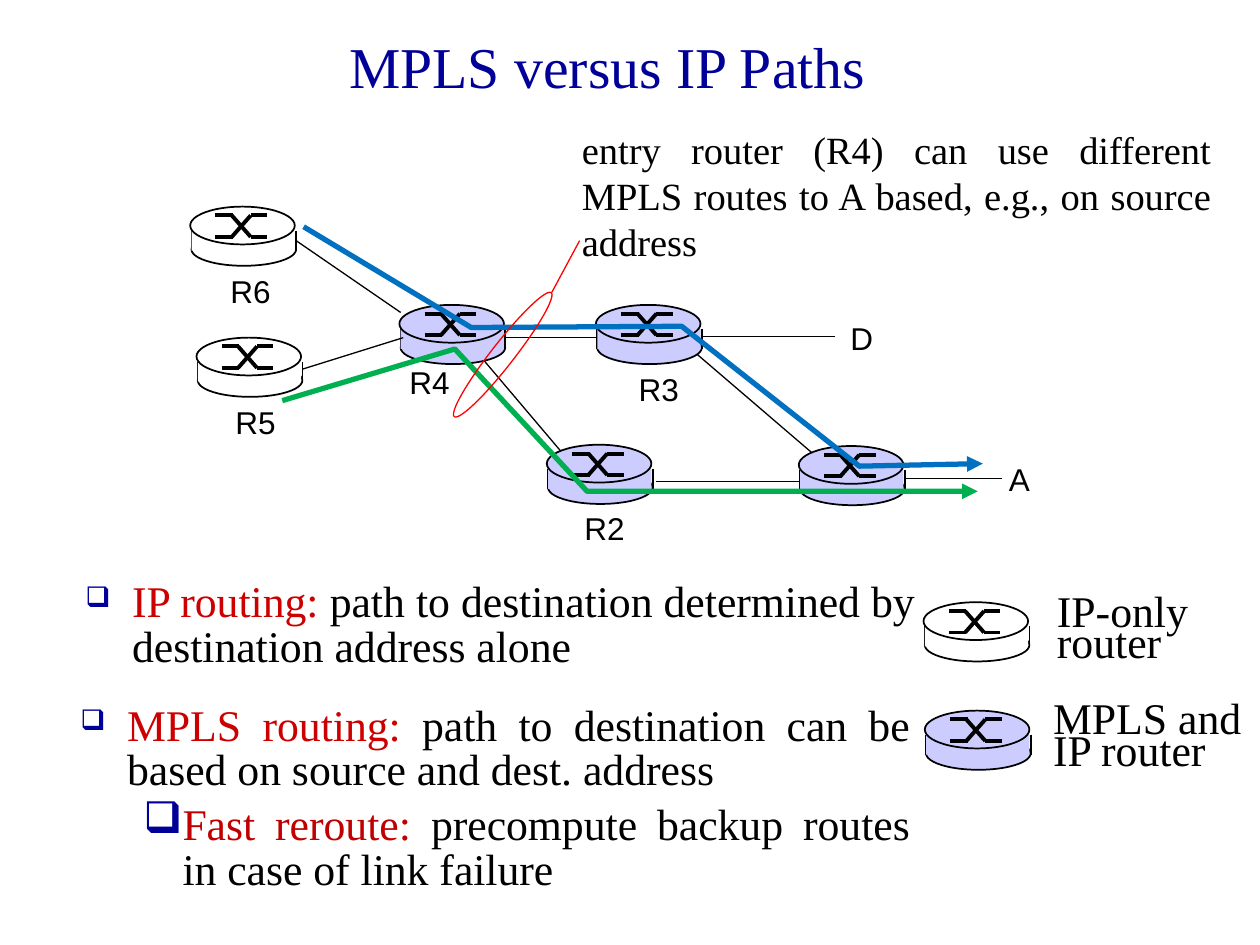
from lxml.etree import SubElement
from pptx import Presentation
from pptx.dml.color import RGBColor
from pptx.enum.shapes import MSO_CONNECTOR, MSO_SHAPE
from pptx.enum.text import MSO_ANCHOR, MSO_AUTO_SIZE, PP_ALIGN
from pptx.oxml.ns import qn
from pptx.util import Inches, Pt

SERIF = "Times New Roman"
BLACK, WHITE, LILAC = "000000", "FFFFFF", "CCCCFF"
NAVY, RED, CRIMSON = "000099", "FF0000", "CC0000"


def tint(code):
    return RGBColor.from_string(code)


def style(shape, fill=None, line=None, width=1):
    shape.shadow.inherit = False
    if fill:
        shape.fill.solid()
        shape.fill.fore_color.rgb = tint(fill)
    else:
        shape.fill.background()
    if line:
        shape.line.color.rgb = tint(line)
        shape.line.width = Pt(width)
    else:
        shape.line.fill.background()
    return shape


def add_form(shapes, kind, box, **look):
    return style(shapes.add_shape(kind, *map(Inches, box)), **look)


def add_line(shapes, ends, color=BLACK, width=0.75):
    line = shapes.add_connector(MSO_CONNECTOR.STRAIGHT, *map(Inches, ends))
    line.line.color.rgb = tint(color)
    line.line.width = Pt(width)
    SubElement(line._element.spPr, qn("a:effectLst"))


def add_bullet(para, left, hang, scale):
    props = para._p.get_or_add_pPr()
    props.set("marL", str(Inches(left)))
    props.set("indent", str(-Inches(hang)))
    color = SubElement(props, qn("a:buClr"))
    SubElement(color, qn("a:srgbClr"), val=NAVY)
    SubElement(props, qn("a:buSzPct"), val=str(scale * 1000))
    SubElement(props, qn("a:buChar"), char="❑")


def add_text(shapes, box, paras, size=25, font=SERIF, color=BLACK, align=None,
             wrap=True, grow=False, anchor=MSO_ANCHOR.TOP, space=None,
             before=(), bullets=()):
    frame = shapes.add_textbox(*map(Inches, box)).text_frame
    frame.word_wrap = wrap
    frame.auto_size = MSO_AUTO_SIZE.SHAPE_TO_FIT_TEXT if grow else MSO_AUTO_SIZE.NONE
    frame.vertical_anchor = anchor
    for i, runs in enumerate(paras):
        para = frame.paragraphs[0] if i == 0 else frame.add_paragraph()
        if align is not None:
            para.alignment = align
        if space:
            para.line_spacing = space
        if before:
            para.space_before = Pt(before[i])
        if bullets:
            para.level = i
            add_bullet(para, *bullets[i])
        for words, hue in [(runs, color)] if isinstance(runs, str) else runs:
            run = para.add_run()
            run.text = words
            run.font.size = Pt(size)
            run.font.name = font
            run.font.color.rgb = tint(hue)


def add_router(shapes, x, y, fill):
    parts = shapes.add_group_shape().shapes
    add_form(parts, MSO_SHAPE.OVAL, (x + 0.01, y + 0.21, 0.83, 0.26), fill=fill, line=BLACK)
    for side in (x + 0.01, x + 0.84):
        add_line(parts, (side, y + 0.19, side, y + 0.35), width=1)
    add_form(parts, MSO_SHAPE.RECTANGLE, (x + 0.01, y + 0.19, 0.82, 0.16), fill=fill)
    add_form(parts, MSO_SHAPE.OVAL, (x, y, 0.83, 0.3), fill=fill, line=BLACK)
    top, low = y + 0.07, y + 0.24
    for near, far in ((top, low), (low, top)):
        add_line(parts, (x + 0.2, near, x + 0.34, near), width=2.25)
        add_line(parts, (x + 0.33, near, x + 0.48, far), width=2.25)
        add_line(parts, (x + 0.48, far, x + 0.61, far), width=2.25)


def add_route(shapes, points, color):
    spots = [(Inches(x), Inches(y)) for x, y in points]
    form = shapes.build_freeform(*spots[0])
    form.add_line_segments(spots[1:], close=False)
    route = style(form.convert_to_shape(), line=color, width=3)
    SubElement(route._element.spPr.find(qn("a:ln")), qn("a:tailEnd"), type="triangle")


def add_network(shapes, x, y):
    for dx, dy, fill in (
        (4.83, 1.9, LILAC), (2.83, 1.89, LILAC), (3.22, 0.78, LILAC),
        (1.66, 0.78, LILAC), (0, 0, WHITE), (0.05, 1.04, WHITE),
    ):
        add_router(shapes, x + dx, y + dy, fill)
    for a, b, c, d in (
        (0.84, 0.27, 1.67, 0.84), (0.89, 1.29, 1.69, 1.04),
        (2.5, 1.04, 3.22, 1.04), (2.33, 1.22, 2.94, 1.94),
        (3.7, 2.18, 4.84, 2.18), (4.02, 1.17, 4.93, 1.95),
        (5.67, 2.16, 6.44, 2.16), (4.06, 1.03, 5.12, 1.03),
    ):
        add_line(shapes, (x + a, y + b, x + c, y + d))
    for name, dx, dy, wide in (
        ("R2", 3.03, 2.35, 0.52), ("D", 5.14, 0.84, 0.38),
        ("R3", 3.46, 1.25, 0.52), ("R4", 1.64, 1.19, 0.52),
        ("R5", 0.26, 1.51, 0.52), ("A", 6.4, 1.96, 0.37),
        ("R6", 0.22, 0.47, 0.52),
    ):
        add_text(shapes, (x + dx, y + dy, wide, 0.41), [name],
                 size=18, font="Arial", wrap=False, grow=True)
    for color, points in (
        ("0070C0", ((0.9, 0.16), (2.23, 0.96), (3.9, 0.95), (5.31, 2.06), (6.29, 2.04))),
        ("00B050", ((0.73, 1.54), (2.1, 1.13), (3.15, 2.26), (6.25, 2.26))),
    ):
        add_route(shapes, [(x + dx, y + dy) for dx, dy in points], color)


def add_key(shapes, x, y, fill, lines, box):
    add_router(shapes, x, y, fill)
    dx, dy, wide = box
    add_text(shapes, (x + dx, y + dy, wide, 0.61), lines,
             wrap=False, grow=True, space=Pt(18))


def add_points(shapes, box, paras):
    add_text(shapes, box, paras, align=PP_ALIGN.JUSTIFY, space=0.85,
             before=(7, 6), bullets=((0.37, 0.37, 65), (0.81, 0.31, 100)))


def add_note(shapes, x, y):
    ring = add_form(shapes, MSO_SHAPE.OVAL, (x, y + 1.24, 0.18, 1.25), line=RED, width=0.75)
    ring.rotation = 38
    add_line(shapes, (x + 0.48, y + 1.37, x + 0.7, y + 0.96), color=RED)
    note = ("entry router (R4) can use different MPLS routes to A based, "
            "e.g., on source address")
    add_text(shapes, (x + 0.62, y, 5.19, 1.2), [note], size=22,
             align=PP_ALIGN.JUSTIFY, grow=True)


def main():
    deck = Presentation()
    deck.slide_width, deck.slide_height = Inches(10), Inches(7.5)
    shapes = deck.slides.add_slide(deck.slide_layouts[6]).shapes
    add_network(shapes, 1.51, 1.64)
    add_text(shapes, (0.57, 0.16, 8.5, 0.72), ["MPLS versus IP Paths"], size=33,
             color=NAVY, align=PP_ALIGN.CENTER, anchor=MSO_ANCHOR.MIDDLE)
    add_key(shapes, 7.33, 4.78, WHITE, ["IP-only", "router"], (0.96, -0.03, 1.25))
    add_points(shapes, (0.58, 4.57, 6.78, 2.51), [
        [("IP routing: ", CRIMSON),
         ("path to destination determined by destination address alone", BLACK)],
    ])
    add_key(shapes, 7.34, 5.64, LILAC, ["MPLS and", "IP router"], (0.92, -0.04, 1.8))
    add_points(shapes, (0.54, 5.55, 6.78, 1.69), [
        [("MPLS routing: ", CRIMSON),
         ("path to destination can be based on source and dest. address", BLACK)],
        [("Fast reroute: ", "C00000"),
         ("precompute backup routes in case of link failure", BLACK)],
    ])
    add_note(shapes, 3.9, 0.95)
    deck.save("out.pptx")


if __name__ == "__main__":
    main()
